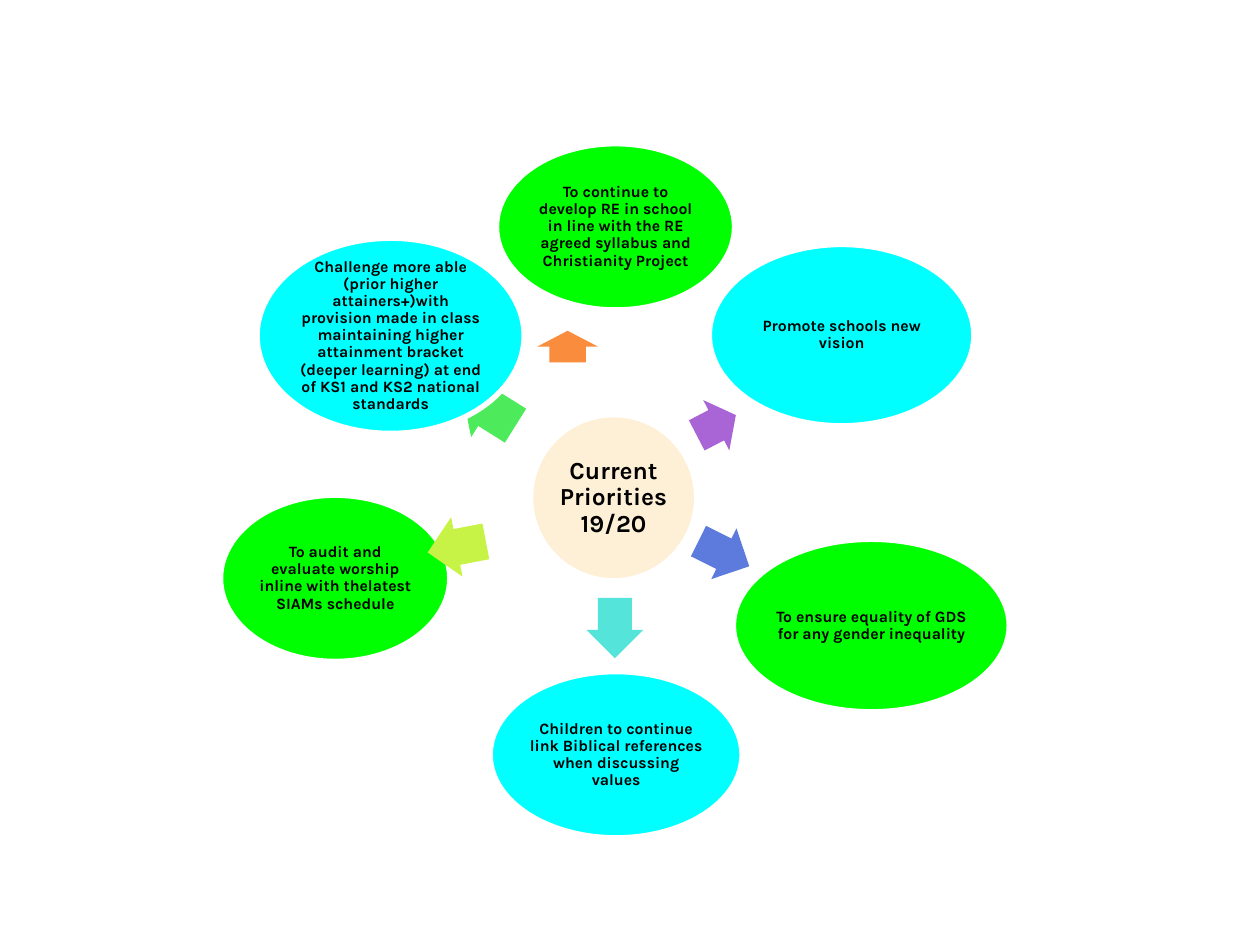
from pptx import Presentation
from pptx.dml.color import RGBColor
from pptx.enum.shapes import MSO_SHAPE as SHAPE
from pptx.enum.text import MSO_ANCHOR as ANCHOR, PP_ALIGN as ALIGN
from pptx.util import Inches, Pt

GREEN, CYAN, CREAM = "00FF00", "00FFFF", "FEF0D7"


def rgb(value):
    return RGBColor.from_string(value)


def add_oval(left, top, width, height, fill, text, size=9, inset=0.01):
    sp = s.shapes.add_shape(SHAPE.OVAL, Inches(left), Inches(top),
                            Inches(width), Inches(height))
    sp.shadow.inherit = False
    sp.fill.solid()
    sp.fill.fore_color.rgb = rgb(fill)
    sp.line.color.rgb = rgb("FFFFFF")
    sp.line.width = Pt(3.15)
    tf = sp.text_frame
    tf.word_wrap = True
    tf.vertical_anchor = ANCHOR.MIDDLE
    tf.margin_left = tf.margin_right = Inches(inset)
    tf.margin_top = tf.margin_bottom = Inches(inset)
    p = tf.paragraphs[0]
    p.text = text
    p.alignment = ALIGN.CENTER
    p.line_spacing = 0.9
    font = p.runs[0].font
    font.name = "Karla"
    font.size = Pt(size)
    font.bold = True
    font.color.rgb = rgb("000000")


prs = Presentation()
prs.slide_width, prs.slide_height = Inches(10), Inches(7.5)
s = prs.slides.add_slide(prs.slide_layouts[6])

# Centre and the priorities around it, clockwise from the top
add_oval(4.21, 3.29, 1.32, 1.32, CREAM, "Current Priorities 19/20", 14, 0.02)
priorities = [
    (3.94, 1.14, 1.89, 1.32, GREEN,
     "To continue to develop RE in school in line with the RE agreed "
     "syllabus and Christianity Project"),
    (5.63, 1.94, 2.1, 1.44, CYAN, "Promote schools new vision"),
    (5.82, 4.28, 2.19, 1.37, GREEN,
     "To ensure equality of GDS for any gender inequality"),
    (3.89, 5.33, 2, 1.32, CYAN,
     "Children to continue link Biblical references when discussing values"),
    (1.75, 3.93, 1.82, 1.32, GREEN,
     "To audit and evaluate worship inline with thelatest SIAMs schedule"),
]
for priority in priorities:
    add_oval(*priority)

# Arrows pointing outwards, in the same order
arrows = [
    (4.38, 2.51, 0.25, 0.48, 270, "FA8D3D"),
    (5.51, 3.15, 0.35, 0.45, 332.6, "A965D6"),
    (5.52, 4.17, 0.45, 0.45, 26.4, "5D7BDD"),
    (4.64, 4.76, 0.48, 0.45, 90, "55E4DA"),
    (3.39, 4.1, 0.47, 0.48, 169.2, "C6F345"),
    (3.63, 2.98, 0.5, 0.53, 212.1, "4DEB5C"),
]
for left, top, width, height, angle, fill in arrows:
    sp = s.shapes.add_shape(SHAPE.RIGHT_ARROW, Inches(left), Inches(top),
                            Inches(width), Inches(height))
    sp.shadow.inherit = False
    sp.adjustments[0], sp.adjustments[1] = 0.6, 0.5
    sp.rotation = angle
    sp.fill.solid()
    sp.fill.fore_color.rgb = rgb(fill)
    sp.line.fill.background()

# The last priority overlaps the tip of its arrow
add_oval(2.04, 1.89, 2.12, 1.55, CYAN,
         "Challenge more able (prior higher attainers+)with provision made in "
         "class maintaining higher attainment bracket (deeper learning) at end "
         "of KS1 and KS2 national standards")

prs.save("out.pptx")
